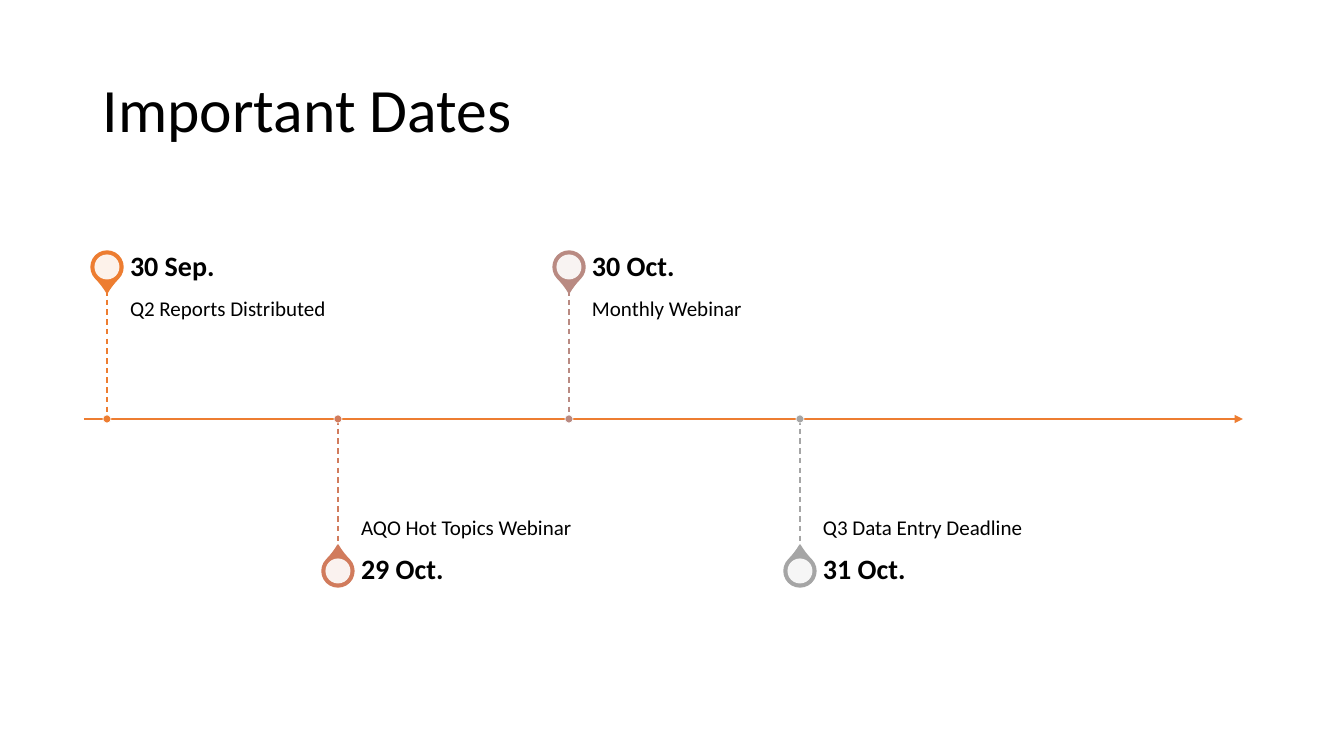
"""Build the Important Dates timeline slide."""
from lxml.etree import SubElement
from pptx import Presentation
from pptx.dml.color import RGBColor
from pptx.enum.dml import MSO_LINE
from pptx.enum.shapes import MSO_CONNECTOR, MSO_SHAPE
from pptx.enum.text import MSO_ANCHOR
from pptx.oxml.ns import qn
from pptx.util import Pt

PX = 914400 / 100.8
BLACK = RGBColor(0x00, 0x00, 0x00)
WHITE = RGBColor(0xFF, 0xFF, 0xFF)
ORANGE = RGBColor(0xED, 0x7D, 0x31)
TERRACOTTA = RGBColor(0xD1, 0x7B, 0x5C)
ROSE = RGBColor(0xB9, 0x8A, 0x82)
GREY = RGBColor(0xA5, 0xA5, 0xA5)

AXIS_Y = 419
FIRST_X, STEP_X = 107, 231
STEM, PIN_OFFSET = 129, 152
TEXT_GAP, TEXT_WIDTH, DATE_HEIGHT = 23, 385, 45

EVENTS = [
    ("30 Sep.", "Q2 Reports Distributed", ORANGE),
    ("29 Oct.", "AQO Hot Topics Webinar", TERRACOTTA),
    ("30 Oct.", "Monthly Webinar", ROSE),
    ("31 Oct.", "Q3 Data Entry Deadline", GREY),
]

presentation = Presentation()
presentation.slide_width = round(1344 * PX)
presentation.slide_height = round(756 * PX)
slide = presentation.slides.add_slide(presentation.slide_layouts[6])


def add_text(text, box, insets, size, anchor, bold=False):
    textbox = slide.shapes.add_textbox(*[round(length * PX) for length in box])
    frame = textbox.text_frame
    frame.word_wrap = True
    frame.vertical_anchor = anchor
    (frame.margin_left, frame.margin_top,
     frame.margin_right, frame.margin_bottom) = [round(inset * PX) for inset in insets]
    frame.text = text
    paragraph = frame.paragraphs[0]
    paragraph.line_spacing = 0.9
    font = paragraph.runs[0].font
    font.name, font.size, font.bold = "Calibri", Pt(size), bold
    font.color.rgb = BLACK


def add_line(start_x, start_y, end_x, end_y, color, width):
    points = [round(length * PX) for length in (start_x, start_y, end_x, end_y)]
    connector = slide.shapes.add_connector(MSO_CONNECTOR.STRAIGHT, *points)
    connector.line.color.rgb = color
    connector.line.width = Pt(width)
    SubElement(connector._element.spPr, qn("a:effectLst"))
    return connector


add_text("Important Dates", (93, 40, 1159, 146), (10, 5, 10, 5), 44, MSO_ANCHOR.MIDDLE)

axis = add_line(84, AXIS_Y, 1243, AXIS_Y, ORANGE, 1.5)
SubElement(axis._element.spPr.find(qn("a:ln")), qn("a:tailEnd"), type="triangle")

for index, (date, description, color) in enumerate(EVENTS):
    above = index % 2 == 0
    side = -1 if above else 1
    center_x = FIRST_X + index * STEP_X
    text_x = center_x + TEXT_GAP
    pin_y = AXIS_Y + side * PIN_OFFSET
    stem_y = AXIS_Y + side * STEM

    stem = add_line(center_x, min(stem_y, AXIS_Y), center_x, max(stem_y, AXIS_Y), color, 1)
    stem.line.dash_style = MSO_LINE.DASH

    for preset, center_y, size, fill, outline, width in (
        (MSO_SHAPE.TEAR, pin_y, 32, color, color, 1),
        (MSO_SHAPE.OVAL, pin_y, 25, WHITE, None, 0),
        (MSO_SHAPE.OVAL, AXIS_Y, 8, color, WHITE, 0.5),
    ):
        shape = slide.shapes.add_shape(
            preset, round((center_x - size / 2) * PX), round((center_y - size / 2) * PX),
            round(size * PX), round(size * PX))
        shape.shadow.inherit = False
        shape.fill.solid()
        shape.fill.fore_color.rgb = fill
        if outline is None:
            shape.line.fill.background()
            white = shape._element.spPr.find(qn("a:solidFill")).find(qn("a:srgbClr"))
            SubElement(white, qn("a:alpha"), val="90000")
        else:
            shape.line.color.rgb = outline
            shape.line.width = Pt(width)
        if preset == MSO_SHAPE.TEAR:
            shape.adjustments[0] = 1.15
            shape.rotation = 135 if above else 315

    add_text(description, (text_x, min(stem_y, AXIS_Y), TEXT_WIDTH, STEM),
             (0, 10, 10, 16) if above else (0, 16, 0, 10), 15,
             MSO_ANCHOR.TOP if above else MSO_ANCHOR.BOTTOM)
    add_text(date, (text_x, stem_y - DATE_HEIGHT if above else stem_y, TEXT_WIDTH, DATE_HEIGHT),
             (0, 0, 14, 0), 20, MSO_ANCHOR.MIDDLE, bold=True)

presentation.save("out.pptx")
